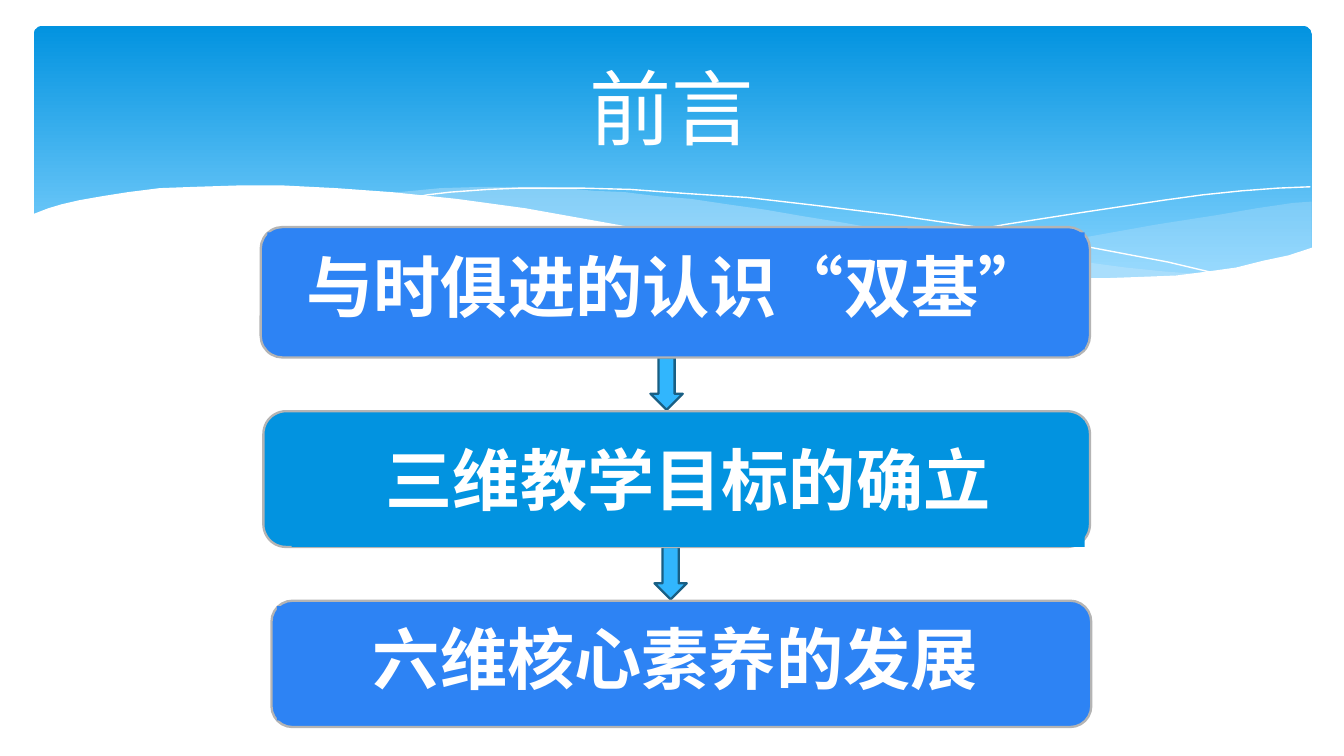
from lxml.etree import SubElement
from pptx import Presentation
from pptx.dml.color import RGBColor
from pptx.enum.lang import MSO_LANGUAGE_ID as Language
from pptx.enum.shapes import MSO_SHAPE as Shape
from pptx.enum.text import MSO_ANCHOR as Anchor, PP_ALIGN as Align
from pptx.oxml.ns import qn
from pptx.util import Inches, Pt

COLORS = {
    "white": "FFFFFF",
    "banner_top": "0293E0",
    "banner_bottom": "83D3FE",
    "wave": "C6E7FC",
    "arrow": "31B6FD",
    "arrow_edge": "195F84",
    "blue": "2D83F4",
    "deep_blue": "0293E0",
    "edge": "B4B4B4",
}

RIGHT_WAVE = [
    (9.76, 1.5), (9.62, 1.51), (9.35, 1.55), (9.06, 1.6), (8.61, 1.67),
    (8.05, 1.77), (7.53, 1.86), (7.06, 1.93), (6.61, 1.99), (6.91, 2.02),
    (7.19, 2.04), (7.57, 2.07), (7.92, 2.08), (8.35, 2.08), (8.63, 2.06),
    (8.89, 2.04), (9.13, 2), (9.35, 1.96), (9.49, 1.93), (9.63, 1.89),
    (9.76, 1.85),
]
MIDDLE_WAVE = [
    (8.93, 2.04), (8.66, 2.02), (8.37, 1.99), (8.07, 1.95), (7.75, 1.91),
    (7.41, 1.86), (7.06, 1.8), (6.68, 1.73), (6.29, 1.66), (5.98, 1.61),
    (5.69, 1.56), (5.41, 1.52), (5.14, 1.48), (4.89, 1.46), (4.65, 1.43),
    (4.42, 1.42), (4.2, 1.4), (3.99, 1.39), (3.61, 1.39), (3.28, 1.4),
    (2.86, 1.44), (3.23, 1.47), (3.62, 1.52), (4.04, 1.58), (4.49, 1.66),
    (4.91, 1.74), (5.3, 1.8), (5.66, 1.86), (6.01, 1.91), (6.34, 1.96),
    (6.65, 2), (6.95, 2.03), (7.22, 2.05), (7.48, 2.07), (7.73, 2.08),
    (8.07, 2.09), (8.28, 2.09), (8.57, 2.08), (8.76, 2.06),
]
FALLING_LINE = [
    (3.09, 1.47), (3.18, 1.45), (3.35, 1.43), (3.63, 1.41), (3.87, 1.4),
    (4.33, 1.4), (4.69, 1.41), (5.1, 1.44), (5.56, 1.47), (6.08, 1.53),
    (6.65, 1.6), (7.27, 1.69), (7.95, 1.81), (8.69, 1.95), (9.07, 2.04),
]
RISING_LINE = [
    (6.13, 1.92), (6.53, 1.85), (6.95, 1.77), (7.48, 1.67), (8.06, 1.58),
    (8.66, 1.49), (8.95, 1.45), (9.24, 1.42), (9.51, 1.4), (9.75, 1.39),
]
WHITE_WAVE = [
    (9.77, 1.84), (9.59, 1.9), (9.4, 1.94), (9.2, 1.99), (8.99, 2.02),
    (8.75, 2.05), (8.5, 2.06), (8.23, 2.07), (7.93, 2.07), (7.61, 2.06),
    (7.26, 2.04), (6.88, 2.01), (6.48, 1.96), (6.03, 1.91), (5.55, 1.84),
    (5.03, 1.75), (4.47, 1.65), (3.91, 1.55), (3.4, 1.48), (2.92, 1.43),
    (2.5, 1.4), (2.11, 1.38), (1.77, 1.38), (1.46, 1.39), (1.19, 1.4),
    (0.95, 1.43), (0.76, 1.46), (0.59, 1.49), (0.46, 1.52), (0.36, 1.55),
    (0.23, 1.6), (0.23, 2.47), (9.77, 2.47),
]
STEPS = [
    ("与时俱进的认识“双基”", "blue", (1.94, 1.69, 6.17, 0.97), (1.99, 1.73, 6.08, 0.87)),
    ("三维教学目标的确立", "deep_blue", (1.96, 3.06, 6.15, 1.01), (2.17, 3.13, 5.9, 0.94)),
    ("六维核心素养的发展", "blue", (2.02, 4.47, 6.1, 0.94), (2.06, 4.51, 5.93, 0.85)),
]
ARROWS = [(4.84, 2.66, 0.24, 0.39), (4.87, 4.07, 0.24, 0.39)]


def color(name):
    return RGBColor.from_string(COLORS[name])


def write_text(box, text, size, bold=False, inset=None, line_spacing=None, space_after=None):
    frame = box.text_frame
    frame.word_wrap = True
    frame.vertical_anchor = Anchor.MIDDLE
    if inset is not None:
        frame.margin_left = frame.margin_right = Inches(inset)
        frame.margin_top = frame.margin_bottom = Inches(inset)
    para = frame.paragraphs[0]
    para.alignment = Align.CENTER
    para.line_spacing = line_spacing
    para.space_after = space_after
    span = para.add_run()
    span.text = text
    span.font.name = "Calibri"
    span.font.size = Pt(size)
    span.font.bold = bold
    span.font.color.rgb = color("white")
    span.font.language_id = Language.SIMPLIFIED_CHINESE


class SlideBuilder:
    def __init__(self, page):
        self.page = page

    def paint(self, shape, fill=None, line=None, width=1.25, opacity=None):
        shape.shadow.inherit = False
        if fill:
            shape.fill.solid()
            shape.fill.fore_color.rgb = color(fill)
        else:
            shape.fill.background()
        if opacity is not None:
            tint = shape.fill._xPr.find(qn("a:solidFill"))[0]
            SubElement(tint, qn("a:alpha"), val=str(opacity * 1000))
        if line:
            shape.line.color.rgb = color(line)
            shape.line.width = Pt(width)
        else:
            shape.line.fill.background()
        return shape

    def shape(self, kind, place, **style):
        shape = self.page.shapes.add_shape(kind, *map(Inches, place))
        return self.paint(shape, **style)

    def outline(self, points, close=True, **style):
        corners = [(Inches(x), Inches(y)) for x, y in points]
        builder = self.page.shapes.build_freeform(*corners[0])
        builder.add_line_segments(corners[1:], close=close)
        return self.paint(builder.convert_to_shape(), **style)

    def banner(self, place):
        banner = self.shape(Shape.ROUNDED_RECTANGLE, place)
        banner.adjustments[0] = 0.034
        banner.fill.gradient()
        banner.fill.gradient_angle = 270
        stops = zip(banner.fill.gradient_stops, ("banner_top", "banner_bottom"), (0, 0.9))
        for stop, name, position in stops:
            stop.color.rgb = color(name)
            stop.position = position

    def title(self, text, place):
        box = self.page.shapes.add_textbox(*map(Inches, place))
        write_text(box, text, 44)

    def step(self, text, fill, frame_place, text_place):
        self.shape(Shape.ROUNDED_RECTANGLE, frame_place, fill=fill, line="edge")
        box = self.shape(Shape.RECTANGLE, text_place, fill=fill)
        write_text(box, text, 36, bold=True, inset=0.15, line_spacing=0.9, space_after=Pt(12.6))


def main():
    deck = Presentation()
    deck.slide_width = Inches(10)
    deck.slide_height = Inches(10 * 9 / 16)
    slide = SlideBuilder(deck.slides.add_slide(deck.slide_layouts[6]))

    slide.banner((0.25, 0.19, 9.51, 2.02))
    slide.outline(RIGHT_WAVE, fill="wave", opacity=29)
    slide.outline(MIDDLE_WAVE, fill="wave", opacity=40)
    for points in (FALLING_LINE, RISING_LINE):
        slide.outline(points, close=False, line="white", width=0)
    slide.outline(WHITE_WAVE, fill="white")

    slide.title("前言", (0.5, 0.28, 9, 1.03))
    for place in ARROWS:
        slide.shape(Shape.DOWN_ARROW, place, fill="arrow", line="arrow_edge")
    for step in STEPS:
        slide.step(*step)

    deck.save("out.pptx")


if __name__ == "__main__":
    main()
